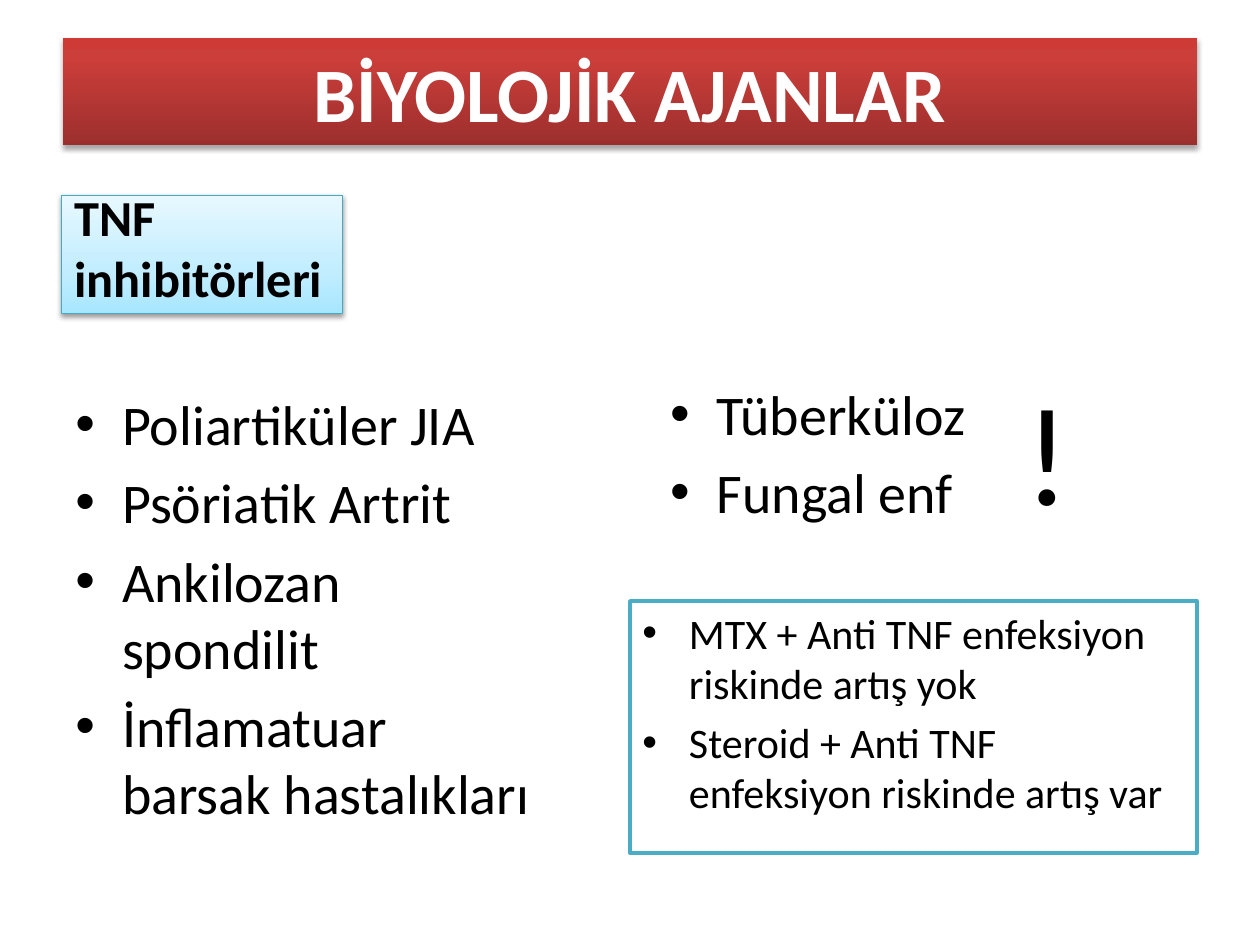
from lxml.etree import SubElement
from pptx import Presentation
from pptx.dml.color import RGBColor
from pptx.enum.shapes import MSO_SHAPE
from pptx.enum.text import MSO_ANCHOR, MSO_AUTO_SIZE, PP_ALIGN
from pptx.oxml.ns import qn
from pptx.util import Inches, Pt

BLACK = RGBColor(0x00, 0x00, 0x00)
WHITE = RGBColor(0xFF, 0xFF, 0xFF)
TEAL = RGBColor(0x4B, 0xAC, 0xC6)
DARK_TEAL = RGBColor(0x46, 0xAA, 0xC5)
# Gradient stops run from bottom to top: (percent, colour)
RED_STOPS = [(0, RGBColor(0x9C, 0x2F, 0x2D)), (80, RGBColor(0xCB, 0x3E, 0x3A)),
             (100, RGBColor(0xCE, 0x3B, 0x37))]
BLUE_STOPS = [(0, RGBColor(0xA7, 0xE6, 0xFF)), (35, RGBColor(0xC1, 0xED, 0xFF)),
              (100, RGBColor(0xE7, 0xF8, 0xFF))]


def write_text(para, text, size, color=BLACK, bold=False, align=PP_ALIGN.LEFT, font="Calibri"):
    para.alignment = align
    span = para.add_run()
    span.text = text
    span.font.name = font
    span.font.size = Pt(size)
    span.font.bold = bold
    span.font.color.rgb = color


def set_color(parent, color, **transforms):
    node = SubElement(parent, qn("a:srgbClr"), val=str(color))
    for name, value in transforms.items():
        SubElement(node, qn(f"a:{name}"), val=str(value))


def fill_gradient(shape, stops):
    shape.fill.gradient()
    shape.fill.gradient_angle = 90
    stop_list = shape._element.spPr.find(qn("a:gradFill")).find(qn("a:gsLst"))
    for old_stop in list(stop_list):
        stop_list.remove(old_stop)
    for percent, color in stops:
        set_color(SubElement(stop_list, qn("a:gs"), pos=str(percent * 1000)), color)


def drop_shadow(shape, opacity, distance):
    """Cast a soft black shadow straight down; opacity in percent, distance in points."""
    shape.shadow.inherit = False
    effects = shape._element.spPr.find(qn("a:effectLst"))
    shadow = SubElement(effects, qn("a:outerShdw"), blurRad=str(Pt(3.1)),
                        dist=str(Pt(distance)), dir="5400000", rotWithShape="0")
    set_color(shadow, BLACK, alpha=opacity * 1000)


class SlideBuilder:
    bullet_indent = Inches(0.37)

    def __init__(self, page):
        self.page = page

    def subject_title(self, text, left, top, width, height):
        title = self.page.shapes.title
        title.left, title.top = Inches(left), Inches(top)
        title.width, title.height = Inches(width), Inches(height)
        fill_gradient(title, BLUE_STOPS)
        title.line.color.rgb = DARK_TEAL
        title.line.width = Pt(0.75)
        drop_shadow(title, 38, 1.6)
        frame = title.text_frame
        frame.word_wrap = True
        frame.auto_size = MSO_AUTO_SIZE.NONE
        frame.vertical_anchor = MSO_ANCHOR.BOTTOM
        write_text(frame.paragraphs[0], text, 28.8, bold=True)

    def rectangle(self, left, top, width, height):
        box = self.page.shapes.add_shape(MSO_SHAPE.RECTANGLE, Inches(left), Inches(top),
                                         Inches(width), Inches(height))
        box.shadow.inherit = False
        box.text_frame.word_wrap = True
        return box

    def banner(self, text, *place):
        bar = self.rectangle(*place)
        fill_gradient(bar, RED_STOPS)
        bar.line.fill.background()
        drop_shadow(bar, 35, 1.8)
        bar.text_frame.vertical_anchor = MSO_ANCHOR.MIDDLE
        write_text(bar.text_frame.paragraphs[0], text, 44, WHITE, True, PP_ALIGN.CENTER)

    def text_box(self, left, top, width, height, wrap=True):
        box = self.page.shapes.add_textbox(Inches(left), Inches(top),
                                           Inches(width), Inches(height))
        box.text_frame.word_wrap = wrap
        return box

    def bullets(self, box, items, size):
        frame = box.text_frame
        frame.vertical_anchor = MSO_ANCHOR.TOP
        for index, item in enumerate(items):
            para = frame.add_paragraph() if index else frame.paragraphs[0]
            write_text(para, item, size)
            para.space_before = Pt(size * 0.2)
            properties = para._p.get_or_add_pPr()
            properties.set("marL", str(self.bullet_indent))
            properties.set("indent", str(-self.bullet_indent))
            SubElement(properties, qn("a:buFont"), typeface="Arial")
            SubElement(properties, qn("a:buChar"), char="•")

    def framed_bullets(self, items, size, *place):
        box = self.rectangle(*place)
        box.fill.solid()
        box.fill.fore_color.rgb = WHITE
        box.line.color.rgb = TEAL
        box.line.width = Pt(2)
        self.bullets(box, items, size)

    def warning_mark(self, *place):
        mark = self.text_box(*place, wrap=False)
        write_text(mark.text_frame.paragraphs[0], "!", 80)


def main():
    deck = Presentation()
    deck.slide_width, deck.slide_height = Inches(10), Inches(7.5)
    builder = SlideBuilder(deck.slides.add_slide(deck.slide_layouts[5]))

    builder.subject_title("TNF inhibitörleri", 0.49, 1.55, 2.23, 0.94)
    builder.bullets(builder.text_box(0.5, 3.04, 3.95, 3.62),
                    ["Poliartiküler JIA", "Psöriatik Artrit", "Ankilozan spondilit",
                     "İnflamatuar barsak hastalıkları"], 32)
    builder.banner("BİYOLOJİK AJANLAR", 0.5, 0.3, 9, 0.85)
    builder.bullets(builder.text_box(5.22, 2.96, 3.95, 1.34), ["Tüberküloz", "Fungal enf"], 32)
    builder.warning_mark(8.03, 2.85, 0.57, 1.45)
    builder.framed_bullets(["MTX + Anti TNF enfeksiyon riskinde artış yok",
                            "Steroid + Anti TNF enfeksiyon riskinde artış var"],
                           24, 5, 4.77, 4.5, 2)
    deck.save("out.pptx")


if __name__ == "__main__":
    main()
